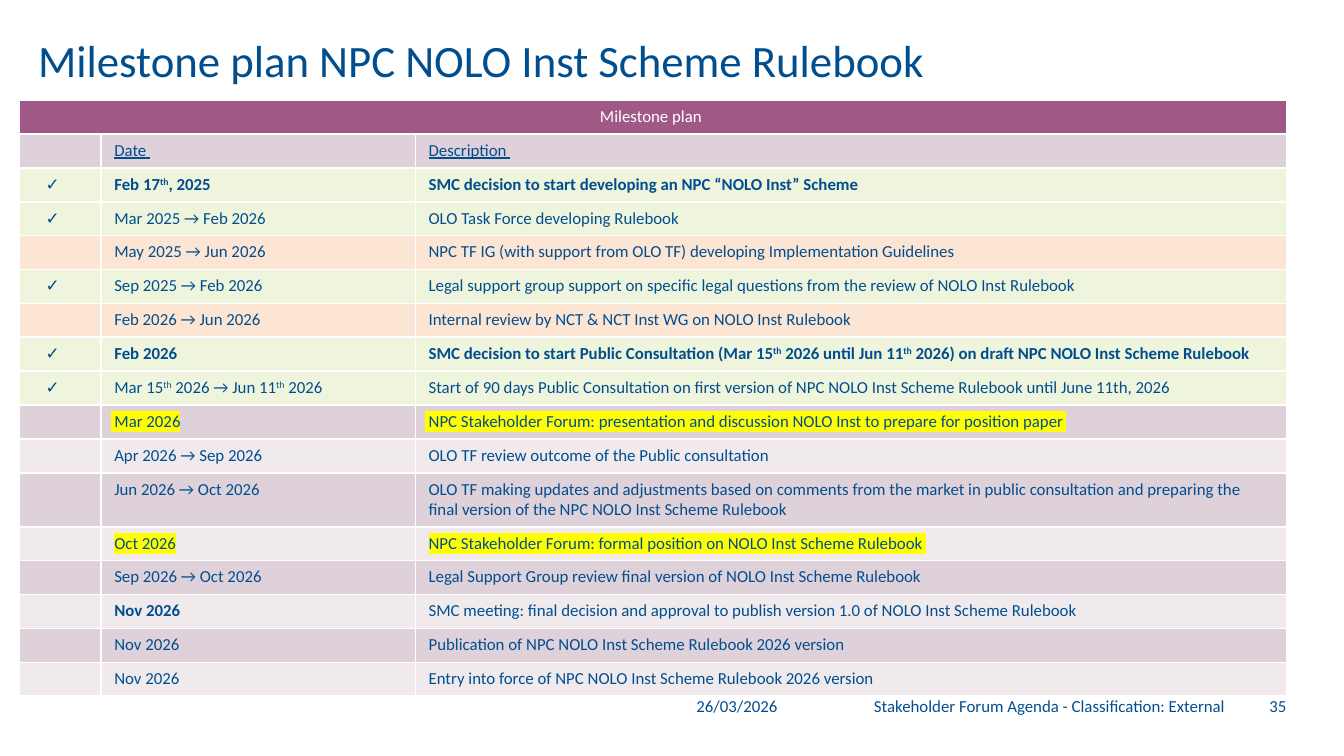
from lxml import etree
from pptx import Presentation
from pptx.dml.color import RGBColor
from pptx.enum.text import MSO_ANCHOR, PP_ALIGN
from pptx.oxml.ns import qn
from pptx.util import Cm, Pt

LEFT, CENTER, RIGHT = PP_ALIGN.LEFT, PP_ALIGN.CENTER, PP_ALIGN.RIGHT
MIDDLE, BOTTOM = MSO_ANCHOR.MIDDLE, MSO_ANCHOR.BOTTOM

COLORS = {
    "text": "014E8F",
    "white": "FFFFFF",
    "header": "A05886",
    "dark": "DFD1D9",
    "light": "F0EAED",
    "done": "EFF5DC",
    "ongoing": "FCE5D3",
    "mark": "FFFF00",
}
FONT = "Calibri"
COLUMNS = (1.55, 5.94, 16.46)
ROW_HEIGHT, TALL_HEIGHT = 0.64, 1.02
LINE_LENGTH = 140
STYLES = {"*": "bold", "_": "underline", "!": "highlight"}

MILESTONES = [
    ("", "_Date ", "_Description "),
    ("done", "*Feb 17^th^, 2025", "*SMC decision to start developing an NPC “NOLO Inst” Scheme"),
    ("done", "Mar 2025 → Feb 2026", "OLO Task Force developing Rulebook"),
    ("ongoing", "May 2025 → Jun 2026",
     "NPC TF IG (with support from OLO TF) developing Implementation Guidelines"),
    ("done", "Sep 2025 → Feb 2026",
     "Legal support group support on specific legal questions from the review of NOLO Inst Rulebook"),
    ("ongoing", "Feb 2026 → Jun 2026", "Internal review by NCT & NCT Inst WG on NOLO Inst Rulebook"),
    ("done", "*Feb 2026",
     "*SMC decision to start Public Consultation (Mar 15^th^ 2026 until Jun 11^th^ 2026)"
     " on draft NPC NOLO Inst Scheme Rulebook"),
    ("done", "Mar 15^th^ 2026 → Jun 11^th^ 2026",
     "Start of 90 days Public Consultation on first version of NPC NOLO Inst Scheme Rulebook"
     " until June 11th, 2026"),
    ("", "! Mar 2026",
     "! NPC Stakeholder Forum: presentation and discussion NOLO Inst to prepare for position paper "),
    ("", "Apr 2026 → Sep 2026", "OLO TF review outcome of the Public consultation"),
    ("", "Jun 2026 → Oct 2026",
     "OLO TF making updates and adjustments based on comments from the market in public consultation"
     " and preparing the final version of the NPC NOLO Inst Scheme Rulebook"),
    ("", "!Oct 2026", "!NPC Stakeholder Forum: formal position on NOLO Inst Scheme Rulebook "),
    ("", "Sep 2026 → Oct 2026", "Legal Support Group review final version of NOLO Inst Scheme Rulebook"),
    ("", "*Nov 2026",
     "SMC meeting: final decision and approval to publish version 1.0 of NOLO Inst Scheme Rulebook"),
    ("", "Nov 2026", "Publication of NPC NOLO Inst Scheme Rulebook 2026 version"),
    ("", "Nov 2026", "Entry into force of NPC NOLO Inst Scheme Rulebook 2026 version"),
]


def set_attrs(obj, values):
    for name, value in values.items():
        setattr(obj, name, value)


def add_color(parent, tag, color):
    fill = etree.SubElement(parent, qn(tag))
    etree.SubElement(fill, qn("a:srgbClr")).set("val", COLORS[color])


def write(tf, text, size=9, color="text", align=LEFT):
    style = STYLES.get(text[:1], "")
    p = tf.paragraphs[0]
    p.alignment = align
    if not text:
        p._p.get_or_add_endParaRPr().set("sz", str(size * 100))
        return
    for i, part in enumerate(text[1 if style else 0:].split("^")):
        r = p.add_run()
        r.text = part
        r.font.color.rgb = RGBColor.from_string(COLORS[color])
        rPr = r._r.get_or_add_rPr()
        if i % 2:
            rPr.set("baseline", "30000")
        if style == "highlight":
            add_color(rPr, "a:highlight", "mark")
        set_attrs(r.font, {"name": FONT, "size": Pt(size), "bold": style == "bold",
                           "underline": style == "underline"})


def frame_text(tf, anchor):
    set_attrs(tf, {"word_wrap": True, "vertical_anchor": anchor, "margin_left": 0,
                   "margin_top": 0, "margin_right": 0, "margin_bottom": 0})


def add_title(s, box, text):
    sp = s.shapes.title
    set_attrs(sp, dict(zip(("left", "top", "width", "height"), map(Cm, box))))
    frame_text(sp.text_frame, MIDDLE)
    write(sp.text_frame, text, size=24)


def style_cell(cell, fill):
    cell.fill.solid()
    cell.fill.fore_color.rgb = RGBColor.from_string(COLORS[fill])
    tcPr = cell._tc.get_or_add_tcPr()
    for i, side in enumerate(("a:lnL", "a:lnR", "a:lnT", "a:lnB")):
        ln = etree.Element(qn(side), w=str(Pt(1)))
        add_color(ln, "a:solidFill", "white")
        tcPr.insert(i, ln)


def add_milestones(s, box):
    left, top, width, height = map(Cm, box)
    table = s.shapes.add_table(len(MILESTONES) + 1, len(COLUMNS), left, top, width, height).table
    for column, size in zip(table.columns, COLUMNS):
        column.width = Cm(size)
    table.rows[0].height = Cm(ROW_HEIGHT)
    for cell in table.rows[0].cells:
        style_cell(cell, "header")
    heading = table.cell(0, 0)
    heading.merge(table.cell(0, len(COLUMNS) - 1))
    write(heading.text_frame, "Milestone plan ", color="white", align=CENTER)
    for i, (state, date, description) in enumerate(MILESTONES, 1):
        table.rows[i].height = Cm(TALL_HEIGHT if len(description) > LINE_LENGTH else ROW_HEIGHT)
        check = "✓" if state == "done" else ""
        for j, text in enumerate((check, date, description)):
            cell = table.cell(i, j)
            style_cell(cell, state or ("dark" if i % 2 else "light"))
            margin = 0.18 if text.startswith("! ") else 0.25
            set_attrs(cell, {"margin_left": Cm(margin if j else 0.5), "margin_right": Cm(margin),
                             "margin_top": Cm(0.12), "margin_bottom": Cm(0.12)})
            write(cell.text_frame, text)


def add_footer(s, box):
    left, top, width, height = box
    right = left + width
    parts = [
        ("26/03/2026", left, 2.82, LEFT),
        ("Stakeholder Forum Agenda - Classification: External", right - 8.13, 6.96, RIGHT),
        ("35", right - 1.02, 1.02, RIGHT),
    ]
    for text, x, w, align in parts:
        sp = s.shapes.add_textbox(Cm(x), Cm(top), Cm(w), Cm(height))
        frame_text(sp.text_frame, BOTTOM)
        write(sp.text_frame, text, align=align)


def main():
    prs = Presentation()
    prs.slide_width, prs.slide_height = Cm(25.4), Cm(14.28)
    s = prs.slides.add_slide(prs.slide_layouts[5])
    add_title(s, (0.72, 0.52, 23.24, 1.2), "Milestone plan NPC NOLO Inst Scheme Rulebook")
    add_milestones(s, (0.36, 1.89, sum(COLUMNS), 11.26))
    add_footer(s, (13.16, 12.45, 11.15, 1.07))
    prs.save("out.pptx")


if __name__ == "__main__":
    main()
